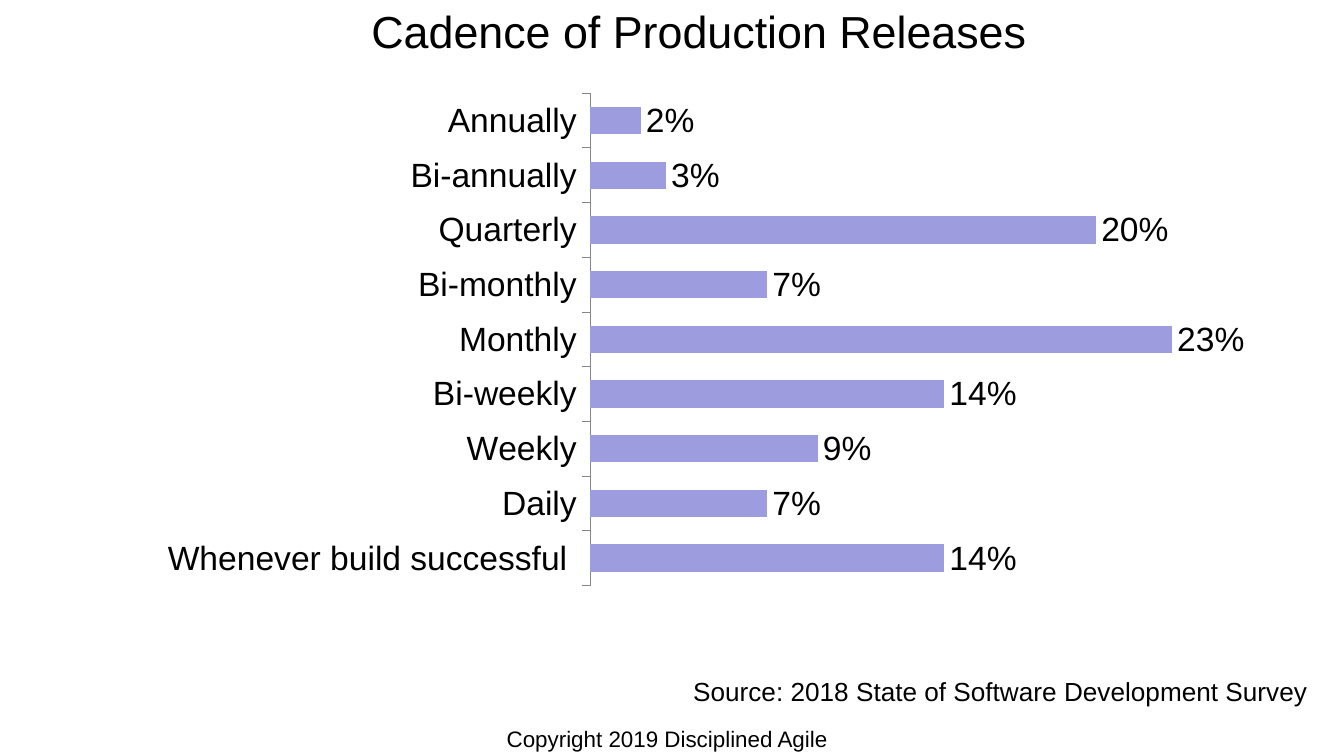
from pptx import Presentation
from pptx.chart.data import CategoryChartData
from pptx.dml.color import RGBColor
from pptx.enum.chart import XL_CHART_TYPE, XL_LABEL_POSITION, XL_TICK_MARK
from pptx.enum.text import MSO_ANCHOR, PP_ALIGN
from pptx.oxml import parse_xml
from pptx.oxml.ns import nsdecls
from pptx.util import Inches, Pt

BAR = XL_CHART_TYPE.BAR_CLUSTERED
OUTER = XL_LABEL_POSITION.OUTSIDE_END
TICK_OUT, TICK_NONE = XL_TICK_MARK.OUTSIDE, XL_TICK_MARK.NONE
CENTER, RIGHT = PP_ALIGN.CENTER, PP_ALIGN.RIGHT
TOP, MIDDLE = MSO_ANCHOR.TOP, MSO_ANCHOR.MIDDLE

FONT = "Arial"
BLACK = RGBColor(0x00, 0x00, 0x00)
LILAC = RGBColor(0x9C, 0x9C, 0xDF)
GRAY = RGBColor(0x86, 0x86, 0x86)

# Content: text, box, size, alignment, anchor
TEXTS = [
    ("Cadence of Production Releases", (0.9, 0, 8.6, 0.46), 24, CENTER, MIDDLE),
    ("Copyright 2019 Disciplined Agile", (1.38, 5.35, 7.17, 0.16), 12, CENTER, TOP),
    ("Source: 2018 State of Software Development Survey",
     (3.61, 4.98, 6.22, 0.34), 14, RIGHT, TOP),
]
# Bars from bottom to top
RATES = [
    ("Whenever build successful ", 0.14),
    ("Daily", 0.07),
    ("Weekly", 0.09),
    ("Bi-weekly", 0.14),
    ("Monthly", 0.23),
    ("Bi-monthly", 0.07),
    ("Quarterly", 0.2),
    ("Bi-annually", 0.03),
    ("Annually", 0.02),
]
CHART_BOX = (0.43, 0.69, 9, 4.34)
# Plot area in percent of the chart
PLOT = {"x": 44, "y": 0, "w": 52.3, "h": 84.5}


def set_font(font, size):
    font.name, font.size = FONT, Pt(size)
    font.color.rgb = BLACK


def add_text(slide, text, box, size, align, anchor):
    frame = slide.shapes.add_textbox(*map(Inches, box)).text_frame
    frame.word_wrap = True
    frame.vertical_anchor = anchor
    para = frame.paragraphs[0]
    para.text = text
    para.alignment = align
    set_font(para.font, size)


def place_plot(chart):
    """Fix the inner plot area inside the chart."""
    area = chart.plots[0]._element.getparent()
    for old in area.xpath("c:layout"):
        area.remove(old)
    parts = "".join(f'<c:{key} val="{val / 100:.3f}"/>' for key, val in PLOT.items())
    area.insert(0, parse_xml(
        f'<c:layout {nsdecls("c")}><c:manualLayout><c:layoutTarget val="inner"/>'
        '<c:xMode val="edge"/><c:yMode val="edge"/>'
        f'{parts}</c:manualLayout></c:layout>'))


def add_bars(slide):
    data = CategoryChartData(number_format="0%")
    data.categories = [name for name, rate in RATES]
    data.add_series("Series 1", [rate for name, rate in RATES])
    chart = slide.shapes.add_chart(BAR, *map(Inches, CHART_BOX), data).chart
    chart.has_title = chart.has_legend = False
    set_font(chart.font, 18)
    place_plot(chart)

    # Axes
    cats, vals = chart.category_axis, chart.value_axis
    cats.major_tick_mark, cats.minor_tick_mark = TICK_OUT, TICK_NONE
    cats.has_major_gridlines = vals.has_major_gridlines = False
    cats.format.line.color.rgb = GRAY
    cats.format.line.width = Pt(0.5)
    vals.minimum_scale, vals.maximum_scale = 0, 0.25
    vals.visible = False

    # Bars and labels
    plot = chart.plots[0]
    plot.gap_width = 100
    plot.vary_by_categories = False
    fill = plot.series[0].format.fill
    fill.solid()
    fill.fore_color.rgb = LILAC
    plot.has_data_labels = True
    labels = plot.data_labels
    labels.show_value = True
    labels.number_format, labels.number_format_is_linked = "0%", False
    labels.position = OUTER
    set_font(labels.font, 18)


def main():
    deck = Presentation()
    deck.slide_width = Inches(10)
    deck.slide_height = deck.slide_width * 9 // 16
    slide = deck.slides.add_slide(deck.slide_layouts[6])
    add_bars(slide)
    for item in TEXTS:
        add_text(slide, *item)
    deck.save("out.pptx")


if __name__ == "__main__":
    main()
